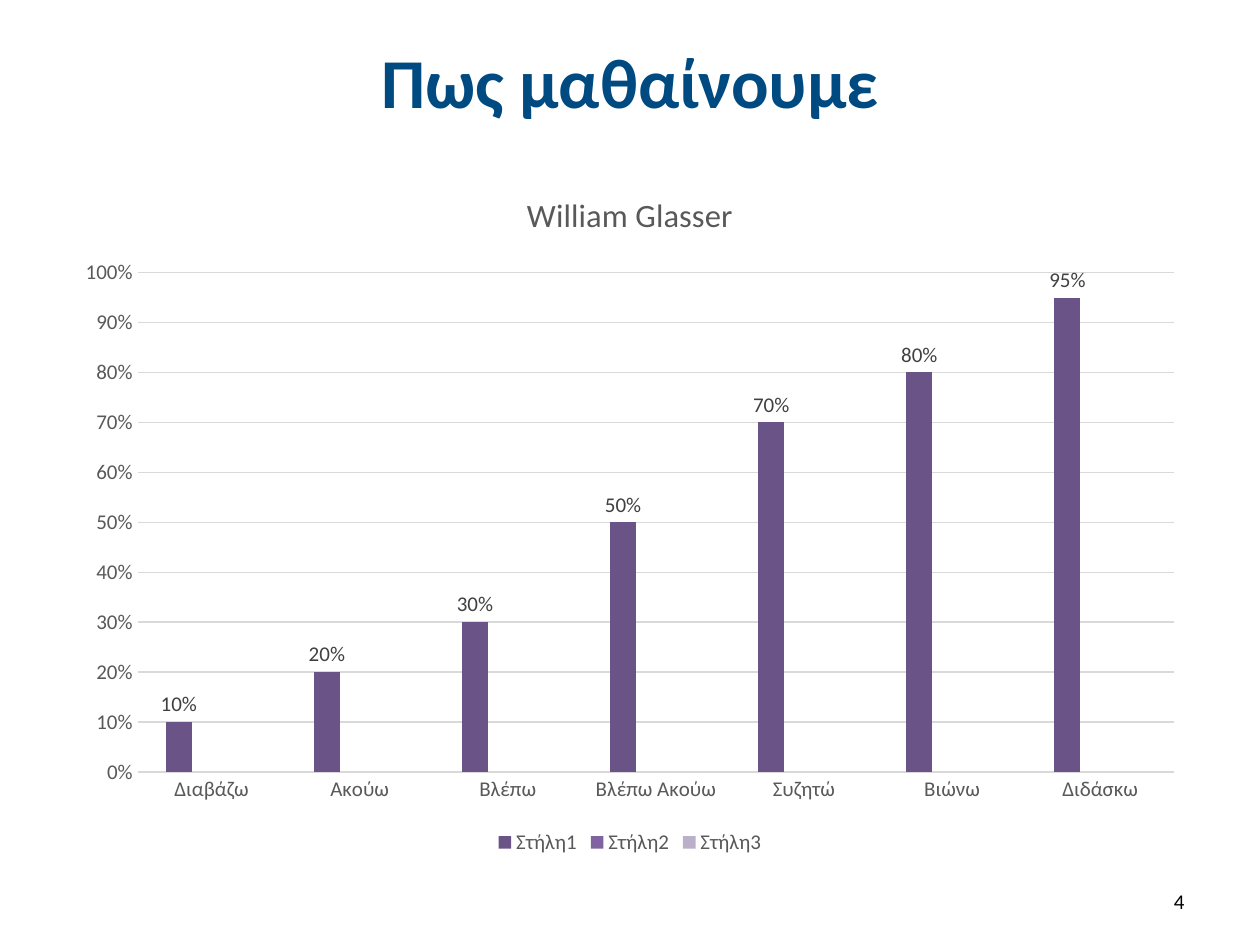
"""Build a slide with a column chart of how people learn."""
from dataclasses import dataclass

from pptx import Presentation
from pptx.chart.data import CategoryChartData
from pptx.dml.color import RGBColor
from pptx.enum.chart import XL_CHART_TYPE, XL_LABEL_POSITION, XL_LEGEND_POSITION, XL_TICK_MARK
from pptx.enum.text import MSO_ANCHOR, PP_ALIGN
from pptx.util import Inches, Pt

COLUMN = XL_CHART_TYPE.COLUMN_CLUSTERED
OUTSIDE = XL_LABEL_POSITION.OUTSIDE_END
BOTTOM = XL_LEGEND_POSITION.BOTTOM
NO_TICK = XL_TICK_MARK.NONE
MIDDLE = MSO_ANCHOR.MIDDLE
CENTER, RIGHT = PP_ALIGN.CENTER, PP_ALIGN.RIGHT
TITLE_ONLY = 5
WIDTH, HEIGHT = 10, 7.5


@dataclass(frozen=True)
class Theme:
    font: str = "Calibri"
    title: str = "004A82"
    ink: str = "000000"
    muted: str = "595959"
    label: str = "404040"
    grid: str = "D9D9D9"
    series: tuple = ("6A5386", "8064A2", "BAB0C9")
    title_size: float = 40
    chart_title_size: float = 18.6
    small: float = 12
    rule: float = 0.75


def apply(obj, **values):
    for name, value in values.items():
        setattr(obj, name, value)


class Deck:
    def __init__(self, theme):
        self.theme = theme
        self.prs = Presentation()
        apply(self.prs, slide_width=Inches(WIDTH), slide_height=Inches(HEIGHT))
        self.s = self.prs.slides.add_slide(self.prs.slide_layouts[TITLE_ONLY])

    def box(self, x, y, w, h):
        return [Inches(v) for v in (x * WIDTH, y * HEIGHT, w * WIDTH, h * HEIGHT)]

    def font(self, font, size, color, bold=False):
        apply(font, name=self.theme.font, size=Pt(size), bold=bold)
        font.color.rgb = RGBColor.from_string(color)

    def line(self, line):
        line.color.rgb = RGBColor.from_string(self.theme.grid)
        line.width = Pt(self.theme.rule)

    def text(self, tf, text, align, *style):
        apply(tf, word_wrap=True, vertical_anchor=MIDDLE)
        p = tf.paragraphs[0]
        p.alignment = align
        r = p.add_run()
        r.text = text
        self.font(r.font, *style)

    def title(self, text, share):
        sp = self.s.shapes.title
        apply(sp, **dict(zip(("left", "top", "width", "height"), self.box(*share))))
        self.text(sp.text_frame, text, CENTER, self.theme.title_size, self.theme.title, True)

    def number(self, text, share):
        sp = self.s.shapes.add_textbox(*self.box(*share))
        self.text(sp.text_frame, text, RIGHT, self.theme.small, self.theme.ink)

    def columns(self, heading, cats, series, share):
        t = self.theme
        data = CategoryChartData(number_format="0%")
        data.categories = cats
        for name, values in series.items():
            data.add_series(name, values)
        chart = self.s.shapes.add_chart(COLUMN, *self.box(*share), data).chart
        self.font(chart.font, t.small, t.muted)
        tf = chart.chart_title.text_frame
        tf.text = heading
        self.font(tf.paragraphs[0].runs[0].font, t.chart_title_size, t.muted)
        chart.chart_title.include_in_layout = False

        chart.has_legend = True
        apply(chart.legend, position=BOTTOM, include_in_layout=False)
        self.font(chart.legend.font, t.small, t.muted)

        for axis in (chart.category_axis, chart.value_axis):
            apply(axis, major_tick_mark=NO_TICK, minor_tick_mark=NO_TICK)
            self.font(axis.tick_labels.font, t.small, t.muted)
        self.line(chart.category_axis.format.line)
        axis = chart.value_axis
        apply(axis, minimum_scale=0, maximum_scale=1, major_unit=0.1)
        apply(axis.tick_labels, number_format="0%", number_format_is_linked=False)
        axis.format.line.fill.background()
        self.line(axis.major_gridlines.format.line)

        plot = chart.plots[0]
        apply(plot, gap_width=219, overlap=-27, vary_by_categories=False)
        for ser, color in zip(plot.series, t.series):
            ser.format.fill.solid()
            ser.format.fill.fore_color.rgb = RGBColor.from_string(color)
            labels = ser.data_labels
            apply(labels, show_value=True, position=OUTSIDE,
                  number_format="0%", number_format_is_linked=False)
            self.font(labels.font, t.small, t.label)


def main():
    cats = ["Διαβάζω", "Ακούω", "Βλέπω", "Βλέπω Ακούω", "Συζητώ", "Βιώνω", "Διδάσκω"]
    blank = [None] * len(cats)
    series = {
        "Στήλη1": [0.1, 0.2, 0.3, 0.5, 0.7, 0.8, 0.95],
        "Στήλη2": blank,
        "Στήλη3": blank,
    }
    deck = Deck(Theme())
    deck.title("Πως μαθαίνουμε", (0.05, 0.02, 0.9, 0.13))
    deck.columns("William Glasser", cats, series, (0.05, 0.175, 0.9, 0.735))
    deck.number("4", (0.717, 0.927, 0.233, 0.053))
    deck.prs.save("out.pptx")


if __name__ == "__main__":
    main()
